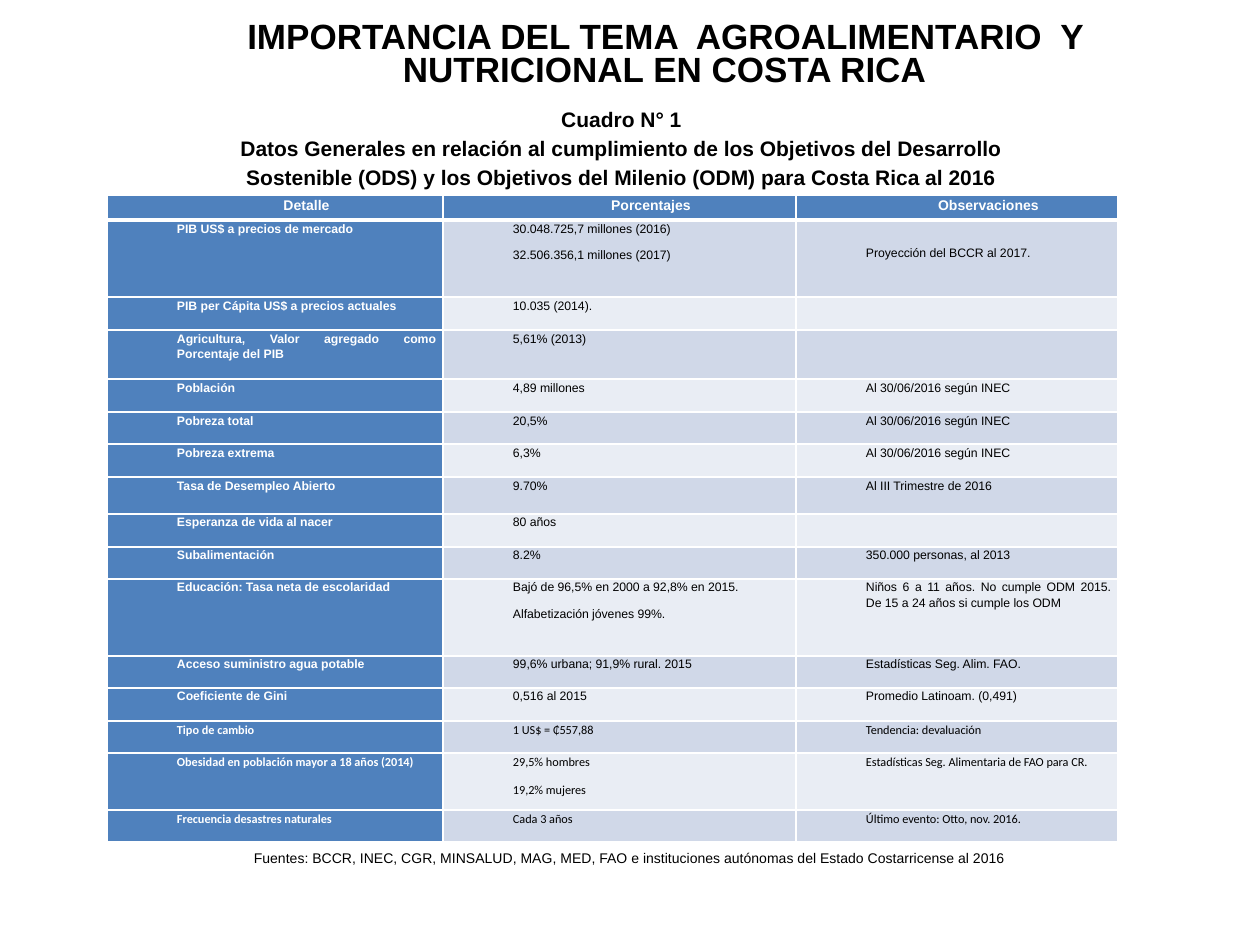
"""Build a slide with a table of general data on Costa Rica's development goals."""
from lxml import etree
from pptx import Presentation
from pptx import util as u
from pptx.dml.color import RGBColor
from pptx.enum import text
from pptx.oxml import ns

THEME = {
    "black": "000000", "white": "FFFFFF", "blue": "4F81BD",
    "bands": ("D0D8E8", "E9EDF4"),
    "font": "Arial", "alt_font": "Calibri",
    "title": 20, "caption": 12, "head": 8, "body": 7, "source": 8,
    "line": 1, "head_line": 3,
}
TITLE = "IMPORTANCIA DEL TEMA  AGROALIMENTARIO  Y NUTRICIONAL EN COSTA RICA"
CAPTION = [
    "Cuadro N° 1",
    "Datos Generales en relación al cumplimiento de los Objetivos del Desarrollo "
    "Sostenible (ODS) y los Objetivos del Milenio (ODM) para Costa Rica al 2016",
]
SOURCE = ("Fuentes: BCCR, INEC, CGR, MINSALUD, MAG, MED, FAO e instituciones "
          "autónomas del Estado Costarricense al 2016")
HEAD = ("Detalle", "Porcentajes", "Observaciones")
ROWS = [
    ("PIB US$ a precios de mercado",
     "30.048.725,7 millones (2016)\n32.506.356,1 millones (2017)",
     "Proyección del BCCR al 2017."),
    ("PIB per Cápita US$ a precios actuales", "10.035 (2014).", ""),
    ("Agricultura, Valor agregado como Porcentaje del PIB", "5,61% (2013)", ""),
    ("Población", "4,89 millones", "Al 30/06/2016 según INEC"),
    ("Pobreza total", "20,5%", "Al 30/06/2016 según INEC"),
    ("Pobreza extrema", "6,3%", "Al 30/06/2016 según INEC"),
    ("Tasa de Desempleo Abierto", "9.70%", "Al III Trimestre de 2016"),
    ("Esperanza de vida al nacer", "80 años", ""),
    ("Subalimentación", "8.2%", "350.000 personas, al 2013"),
    ("Educación: Tasa neta de escolaridad",
     "Bajó de 96,5% en 2000 a 92,8% en 2015.\nAlfabetización jóvenes 99%.",
     "Niños 6 a 11 años. No cumple ODM 2015. De 15 a 24 años si cumple los ODM"),
    ("Acceso suministro agua potable", "99,6% urbana; 91,9% rural. 2015",
     "Estadísticas Seg. Alim. FAO."),
    ("Coeficiente de Gini", "0,516 al 2015", "Promedio Latinoam. (0,491)"),
    ("Tipo de cambio", "1 US$ = ₵557,88", "Tendencia: devaluación"),
    ("Obesidad en población mayor a 18 años (2014)", "29,5% hombres\n19,2% mujeres",
     "Estadísticas Seg. Alimentaria de FAO para CR."),
    ("Frecuencia desastres naturales", "Cada 3 años", "Último evento: Otto, nov. 2016."),
]
ALT_FONT_FROM = 13
COLS = (336, 353, 322)
ROW_H = 33
TALL_ROWS = {0: 25, 1: 77, 3: 49, 7: 37, 10: 77, 14: 57}
LOWERED = {(1, 2): 24}
INDENT, INSET = 63, 7
CENTER, JUSTIFY = text.PP_ALIGN.CENTER, text.PP_ALIGN.JUSTIFY


def px(n):
    return u.Emu(round(n * 914400 / 126))


def put_text(tf, lines, size, color=THEME["black"], bold=False, name=THEME["font"],
             indent=(0, 0), **fmt):
    for i, line in enumerate(lines):
        p = tf.paragraphs[0] if i == 0 else tf.add_paragraph()
        pPr = p._p.get_or_add_pPr()
        for key, n in zip(("marL", "indent"), indent):
            pPr.set(key, str(px(n)))
        for key, value in fmt.items():
            setattr(p, key, value)
        font = p.font
        if line:
            r = p.add_run()
            r.text = line
            font = r.font
        for key, value in {"size": u.Pt(size), "bold": bold, "name": name}.items():
            setattr(font, key, value)
        font.color.rgb = RGBColor.from_string(color)
        if not line:
            end = etree.SubElement(p._p, ns.qn("a:endParaRPr"))
            end.set("sz", str(size * 100))


def place(s, box, lines, size, **fmt):
    s.left, s.top, s.width, s.height = map(px, box)
    tf = s.text_frame
    frame = {"word_wrap": True, "vertical_anchor": text.MSO_ANCHOR.TOP,
             "auto_size": text.MSO_AUTO_SIZE.SHAPE_TO_FIT_TEXT}
    for key, value in frame.items():
        setattr(tf, key, value)
    put_text(tf, lines, size, alignment=CENTER, **fmt)


def set_borders(cell, top, bottom):
    tcPr = cell._tc.get_or_add_tcPr()
    widths = {"lnL": THEME["line"], "lnR": THEME["line"], "lnT": top, "lnB": bottom}
    for i, (tag, width) in enumerate(widths.items()):
        ln = etree.Element(ns.qn("a:" + tag), w=str(u.Pt(width)))
        fill = etree.SubElement(ln, ns.qn("a:solidFill"))
        etree.SubElement(fill, ns.qn("a:srgbClr"), val=THEME["white"])
        tcPr.insert(i, ln)


def fill_cell(cell, row, col, value):
    head, label = row == 0, row == 0 or col == 0
    margins = {"margin_left": px(INSET), "margin_right": px(INSET),
               "margin_top": px(LOWERED.get((row, col), 0)), "margin_bottom": 0}
    for key, n in margins.items():
        setattr(cell, key, n)
    cell.fill.solid()
    color = THEME["blue"] if label else THEME["bands"][(row - 1) % 2]
    cell.fill.fore_color.rgb = RGBColor.from_string(color)
    set_borders(cell, THEME["head_line" if row == 1 else "line"],
                THEME["head_line" if head else "line"])
    put_text(cell.text_frame, value.split("\n"), THEME["head" if head else "body"],
             color=THEME["white" if label else "black"], bold=label,
             name=THEME["alt_font" if row >= ALT_FONT_FROM else "font"],
             indent=(INDENT, 0), alignment=CENTER if head else JUSTIFY,
             line_spacing=1.15, space_after=u.Pt(6))


def add_data_table(slide):
    data = [HEAD, *ROWS]
    heights = [TALL_ROWS.get(i, ROW_H - i % 2) for i in range(len(data))]
    s = slide.shapes.add_table(len(data), len(COLS), px(107), px(195),
                               px(sum(COLS)), px(sum(heights)))
    table = s.table
    table.horz_banding = False
    for column, width in zip(table.columns, COLS):
        column.width = px(width)
    for i, (height, values) in enumerate(zip(heights, data)):
        table.rows[i].height = px(height)
        for j, value in enumerate(values):
            fill_cell(table.cell(i, j), i, j, value)


def main():
    prs = Presentation()
    prs.slide_width, prs.slide_height = px(1260), px(945)
    slide = prs.slides.add_slide(prs.slide_layouts[5])
    place(slide.shapes.title, (163, 16, 955, 81), [TITLE], THEME["title"],
          bold=True, indent=(48, 2), line_spacing=0.8)
    caption = slide.shapes.add_textbox(0, 0, 0, 0)
    place(caption, (179, 97, 885, 98), CAPTION, THEME["caption"],
          bold=True, line_spacing=1.15)
    add_data_table(slide)
    source = slide.shapes.add_textbox(0, 0, 0, 0)
    place(source, (107, 843, 1046, 30), [SOURCE], THEME["source"])
    prs.save("out.pptx")


if __name__ == "__main__":
    main()
